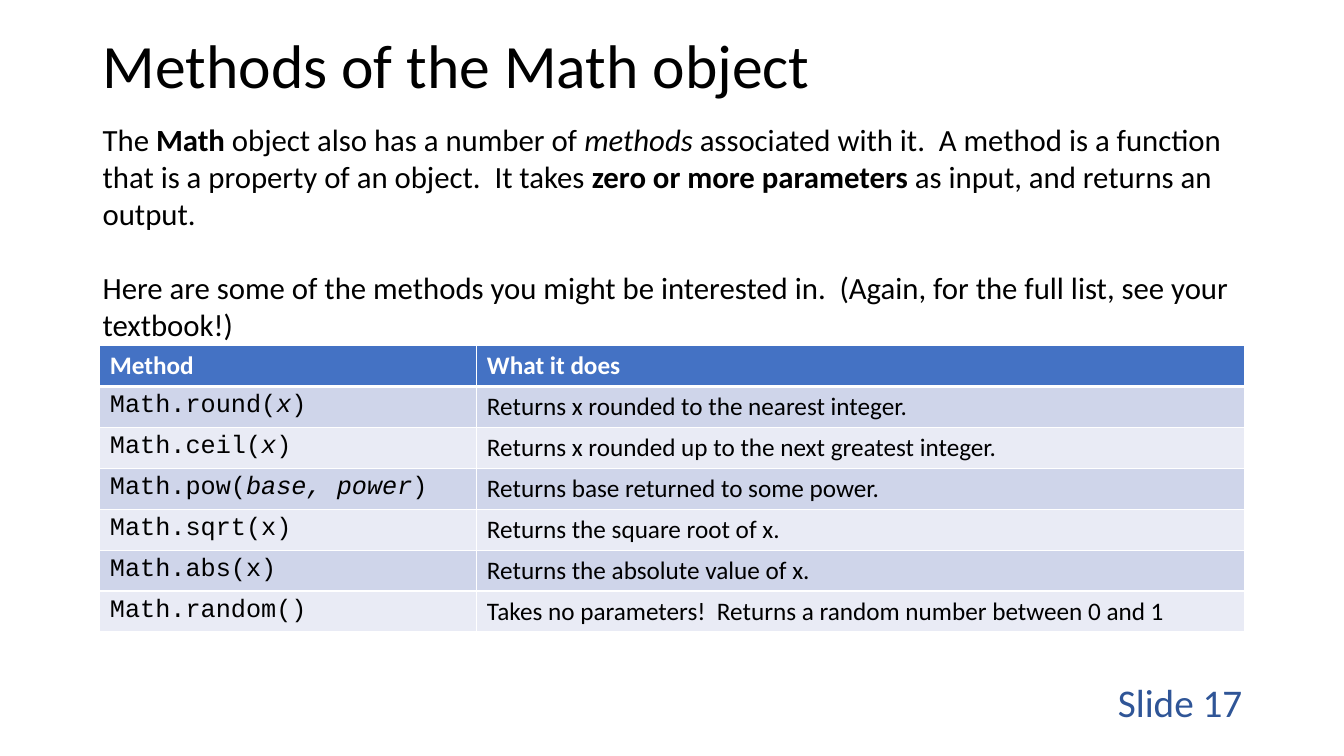
from lxml import etree
from pptx import Presentation, util as u
from pptx.dml import color
from pptx.enum import text
from pptx.oxml import ns

SANS, MONO = "Calibri", "Courier New"
BLACK, WHITE, BLUE, NAVY = "000000", "FFFFFF", "4472C4", "2F5597"
BANDS = ("CFD5EA", "E9EBF5")


def rgb(code):
    return color.RGBColor.from_string(code)


class Deck:
    """Holds the style and the current slide, and draws each kind of element."""

    def __init__(self, prs):
        self.slide = prs.slides.add_slide(prs.slide_layouts[6])

    def words(self, para, runs, size, font=SANS, ink=BLACK, bold=False):
        for words, mark in runs:
            run = para.add_run()
            run.text = words
            run.font.name = font
            run.font.size = u.Pt(size)
            run.font.color.rgb = rgb(ink)
            run.font.bold = bold or mark == "b"
            run.font.italic = mark == "i"

    def label(self, box, paras, size, ink=BLACK, middle=False, right=False,
              lead=None, gap=0):
        frame = self.slide.shapes.add_textbox(*map(u.Inches, box)).text_frame
        frame.word_wrap = True
        frame.vertical_anchor = (text.MSO_ANCHOR.MIDDLE if middle
                                 else text.MSO_ANCHOR.TOP)
        for i, runs in enumerate(paras):
            para = frame.add_paragraph() if i else frame.paragraphs[0]
            para.alignment = text.PP_ALIGN.RIGHT if right else text.PP_ALIGN.LEFT
            para.line_spacing = lead
            para.space_before = u.Pt(gap if i else 0)
            self.words(para, runs, size, ink=ink)

    def edge(self, side, width):
        line = etree.Element(ns.qn("a:ln" + side), w=str(u.Pt(width)))
        fill = etree.SubElement(line, ns.qn("a:solidFill"))
        etree.SubElement(fill, ns.qn("a:srgbClr"), val=WHITE)
        return line

    def cell(self, cell, runs, fill, font, ink, bold, top, bottom):
        cell.fill.solid()
        cell.fill.fore_color.rgb = rgb(fill)
        self.words(cell.text_frame.paragraphs[0], runs, 18, font, ink, bold)
        sides = (("L", 1), ("R", 1), ("T", top), ("B", bottom))
        props = cell._tc.get_or_add_tcPr()
        for i, (side, width) in enumerate(sides):
            props.insert(i, self.edge(side, width))

    def table(self, box, widths, rows):
        grid = self.slide.shapes.add_table(
            len(rows), len(widths), *map(u.Inches, box)).table
        for col, width in zip(grid.columns, widths):
            col.width = u.Inches(width)
        for i, row in enumerate(rows):
            grid.rows[i].height = u.Inches(box[3] / len(rows))
            head = i == 0
            for j, runs in enumerate(row):
                self.cell(grid.cell(i, j), runs,
                          BLUE if head else BANDS[(i - 1) % 2],
                          SANS if head or j else MONO,
                          WHITE if head else BLACK, head,
                          3 if i == 1 else 1, 3 if head else 1)


def call(name, args="", mark=""):
    if not mark:
        return [(f"Math.{name}({args})", "")]
    return [(f"Math.{name}(", ""), (args, mark), (")", "")]


INTRO = [
    [("The ", ""), ("Math", "b"), (" object also has a number of ", ""),
     ("methods", "i"),
     (" associated with it.  A method is a function that is a property of "
      "an object.  It takes ", ""),
     ("zero or more parameters", "b"),
     (" as input, and returns an output.", "")],
    [("Here are some of the methods you might be interested in.  "
      "(Again, for the full list, see your textbook!)", "")],
]
HEAD = [[("Method", "")], [("What it does", "")]]
METHODS = [
    (call("round", "x", "i"), "Returns x rounded to the nearest integer."),
    (call("ceil", "x", "i"), "Returns x rounded up to the next greatest integer."),
    (call("pow", "base, power", "i"), "Returns base returned to some power."),
    (call("sqrt", "x"), "Returns the square root of x."),
    (call("abs", "x"), "Returns the absolute value of x."),
    (call("random"),
     "Takes no parameters!  Returns a random number between 0 and 1"),
]


def main():
    prs = Presentation()
    prs.slide_width, prs.slide_height = u.Inches(13.33), u.Inches(7.5)
    deck = Deck(prs)
    deck.label((0.92, 0.17, 11.5, 1.02), [[("Methods of the Math object", "")]],
               44, middle=True, lead=0.9)
    deck.label((9.42, 6.76, 3, 0.4), [[("Slide 17", "")]], 28, NAVY,
               middle=True, right=True)
    deck.label((0.92, 1.15, 11.7, 2.83), INTRO, 22, gap=26.8)
    rows = [HEAD] + [[name, [(use, "")]] for name, use in METHODS]
    deck.table((0.99, 3.43, 11.35, 2.84), (3.74, 7.61), rows)
    prs.save("out.pptx")


if __name__ == "__main__":
    main()
